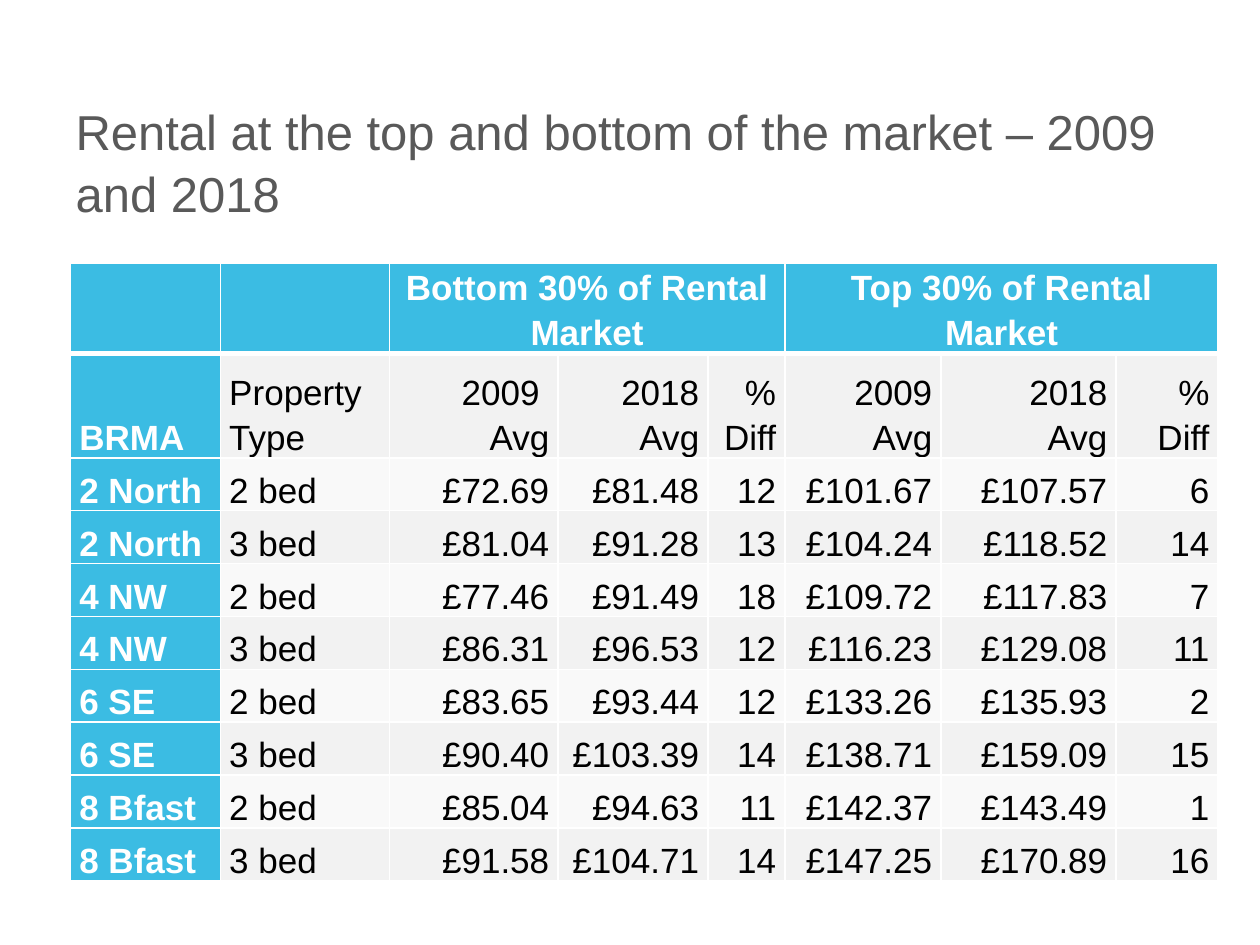
import pptx
import pptx.dml.color
import pptx.enum.text
import pptx.oxml
import pptx.oxml.ns
import pptx.util
from dataclasses import dataclass

Inches, Pt = pptx.util.Inches, pptx.util.Pt
RGB = pptx.dml.color.RGBColor.from_string
ALIGN = pptx.enum.text.PP_ALIGN
ANCHOR = pptx.enum.text.MSO_ANCHOR


@dataclass(frozen=True)
class Theme:
    font: str = "Arial"
    title_size: int = 28
    table_size: int = 20
    title: str = "595959"
    accent: str = "3BBCE3"
    bands: tuple = ("F9F9F9", "F2F2F2")
    body: str = "000000"
    white: str = "FFFFFF"


THEME = Theme()


def style_runs(text_frame, size, color, bold=False):
    for paragraph in text_frame.paragraphs:
        for run in paragraph.runs:
            run.font.name = THEME.font
            run.font.size = Pt(size)
            run.font.bold = bold
            run.font.color.rgb = RGB(color)


def add_border(cell, side, width):
    cell._tc.get_or_add_tcPr().append(pptx.oxml.parse_xml(
        f'<a:ln{side} {pptx.oxml.ns.nsdecls("a")} w="{Pt(width)}"><a:solidFill>'
        f'<a:srgbClr val="{THEME.white}"/></a:solidFill></a:ln{side}>'))


presentation = pptx.Presentation()
presentation.slide_width, presentation.slide_height = Inches(10), Inches(7.5)
slide = presentation.slides.add_slide(presentation.slide_layouts[5])

# Title
heading = slide.shapes.title
heading.left, heading.top = Inches(0.5), Inches(0.71)
heading.width, heading.height = Inches(9), Inches(0.45)
heading_text = heading.text_frame
heading_text.text = "Rental at the top and bottom of the market – 2009 and 2018"
heading_text.word_wrap = True
heading_text.auto_size = pptx.enum.text.MSO_AUTO_SIZE.NONE
heading_text.vertical_anchor = ANCHOR.TOP
heading_text.margin_top = Inches(0.08)
heading_text.paragraphs[0].alignment = ALIGN.LEFT
heading_text.paragraphs[0].line_spacing = 1.04
style_runs(heading_text, THEME.title_size, THEME.title)

# Rents by area and property type
rents = [
    ["", "", "Bottom 30% of Rental Market", "", "", "Top 30% of Rental Market", "", ""],
    ["BRMA", "Property Type", "2009 \nAvg", "2018 Avg", "% Diff",
     "2009 Avg", "2018\n Avg", "% Diff"],
    ["2 North", "2 bed", "£72.69", "£81.48", "12", "£101.67", "£107.57", "6"],
    ["2 North", "3 bed", "£81.04", "£91.28", "13", "£104.24", "£118.52", "14"],
    ["4 NW", "2 bed", "£77.46", "£91.49", "18", "£109.72", "£117.83", "7"],
    ["4 NW", "3 bed", "£86.31", "£96.53", "12", "£116.23", "£129.08", "11"],
    ["6 SE", "2 bed", "£83.65", "£93.44", "12", "£133.26", "£135.93", "2"],
    ["6 SE", "3 bed", "£90.40", "£103.39", "14", "£138.71", "£159.09", "15"],
    ["8 Bfast", "2 bed", "£85.04", "£94.63", "11", "£142.37", "£143.49", "1"],
    ["8 Bfast", "3 bed", "£91.58", "£104.71", "14", "£147.25", "£170.89", "16"],
]
column_widths = [1.19, 1.34, 1.34, 1.19, 0.61, 1.24, 1.39, 0.81]
rent_table = slide.shapes.add_table(
    len(rents), len(column_widths),
    Inches(0.56), Inches(2.09), Inches(9.1), Inches(4.93)).table
for column, width in zip(rent_table.columns, column_widths):
    column.width = Inches(width)
for row_index, row in enumerate(rent_table.rows):
    row.height = Inches(0.83 if row_index == 1 else 0.42)

# Market headings span three columns each
for first in (2, 5):
    rent_table.cell(0, first).merge(rent_table.cell(0, first + 2))

# Cell text, borders and fills
for row_index, values in enumerate(rents):
    for column_index, value in enumerate(values):
        cell = rent_table.cell(row_index, column_index)
        is_header = row_index == 0 or column_index == 0
        cell.margin_left = cell.margin_right = Inches(0.07)
        cell.margin_top = cell.margin_bottom = 0
        cell.vertical_anchor = ANCHOR.BOTTOM
        cell.text_frame.text = value
        for paragraph in cell.text_frame.paragraphs:
            paragraph.line_spacing = 1.15
            if row_index == 0:
                paragraph.alignment = ALIGN.CENTER
            else:
                paragraph.alignment = ALIGN.LEFT if column_index < 2 else ALIGN.RIGHT
        style_runs(cell.text_frame, THEME.table_size,
                   THEME.white if is_header else THEME.body, is_header)
        for side in "LRTB":
            under_heading = (row_index, side) in ((0, "B"), (1, "T"))
            add_border(cell, side, 3 if under_heading else 1)
        cell.fill.solid()
        cell.fill.fore_color.rgb = RGB(
            THEME.accent if is_header else THEME.bands[row_index % 2])

presentation.save("out.pptx")
